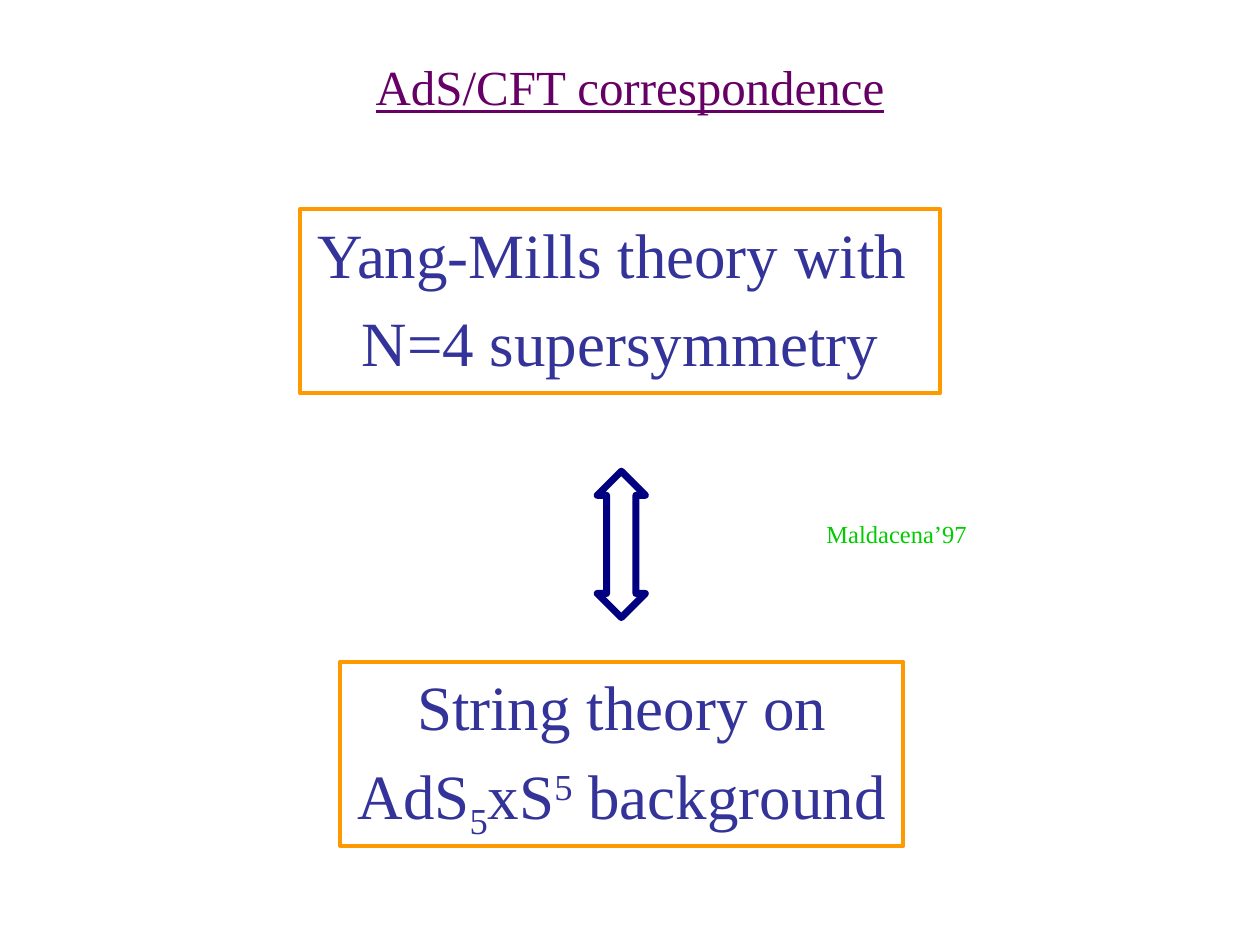
import pptx
import pptx.util
import pptx.dml.color
import pptx.enum.shapes
import pptx.enum.text
import pptx.oxml
import pptx.oxml.ns

Cm, Pt = pptx.util.Cm, pptx.util.Pt
SHAPES = pptx.enum.shapes.MSO_SHAPE
ALIGN = pptx.enum.text.PP_ALIGN
COLORS = {"title": "660066", "theory": "333399", "frame": "FF9900",
          "arrow": "000080", "citation": "00CC00"}
HANGING = Cm(0.95)


def rgb(name):
    return pptx.dml.color.RGBColor.from_string(COLORS[name])


def write_paragraph(paragraph, runs, size, color, align):
    paragraph.alignment = align
    paragraph.font.name = "Times New Roman"
    paragraph.font.size = Pt(size)
    paragraph.font.color.rgb = rgb(color)
    for text, baseline in runs:
        run = paragraph.add_run()
        run.text = text
        if baseline:
            run.font._element.set("baseline", str(baseline * 1000))
    if color != "title":
        properties = paragraph._p.get_or_add_pPr()
        properties.set("marL", str(HANGING))
        properties.set("indent", str(-HANGING))
        properties.insert(0, pptx.oxml.parse_xml(
            f'<a:spcBef {pptx.oxml.ns.nsdecls("a")}><a:spcPct val="20000"/></a:spcBef>'))


deck = pptx.Presentation()
deck.slide_width, deck.slide_height = Cm(25.4), Cm(19.05)
slide = deck.slides.add_slide(deck.slide_layouts[5])

title = slide.shapes.title
title.left, title.top, title.width, title.height = Cm(1.27), Cm(0.76), Cm(22.86), Cm(1.96)
title.text_frame.vertical_anchor = pptx.enum.text.MSO_ANCHOR.MIDDLE
heading = title.text_frame.paragraphs[0]
write_paragraph(heading, [("AdS/CFT correspondence", 0)], 28, "title", ALIGN.CENTER)
heading.font.underline = True

theories = [
    (6.05, 4.22, 12.9, [[("Yang-Mills theory with ", 0)], [("N=4 supersymmetry", 0)]]),
    (6.86, 13.34, 11.35, [[("String theory on", 0)],
                          [("AdS", 0), ("5", -25), ("xS", 0), ("5", 30), (" background", 0)]]),
]
for left, top, width, lines in theories:
    theory = slide.shapes.add_shape(SHAPES.RECTANGLE, Cm(left), Cm(top), Cm(width), Cm(3.71))
    theory.shadow.inherit = False
    theory.fill.background()
    theory.line.color.rgb = rgb("frame")
    theory.line.width = Pt(2.5)
    frame = theory.text_frame
    frame.word_wrap = False
    frame.auto_size = pptx.enum.text.MSO_AUTO_SIZE.SHAPE_TO_FIT_TEXT
    frame.vertical_anchor = pptx.enum.text.MSO_ANCHOR.TOP
    for number, runs in enumerate(lines):
        paragraph = frame.add_paragraph() if number else frame.paragraphs[0]
        write_paragraph(paragraph, runs, 36, "theory", ALIGN.CENTER)

duality = slide.shapes.add_shape(SHAPES.UP_DOWN_ARROW, Cm(12.04), Cm(9.5), Cm(0.97), Cm(2.95))
duality.adjustments[0], duality.adjustments[1] = 0.5, 0.61
duality.shadow.inherit = False
duality.fill.background()
duality.line.color.rgb = rgb("arrow")
duality.line.width = Pt(4)

citation = slide.shapes.add_textbox(Cm(16.41), Cm(10.34), Cm(3.35), Cm(0.86)).text_frame
citation.word_wrap = False
citation.auto_size = pptx.enum.text.MSO_AUTO_SIZE.SHAPE_TO_FIT_TEXT
write_paragraph(citation.paragraphs[0], [("Maldacena’97", 0)], 14, "citation", ALIGN.LEFT)

deck.save("out.pptx")
